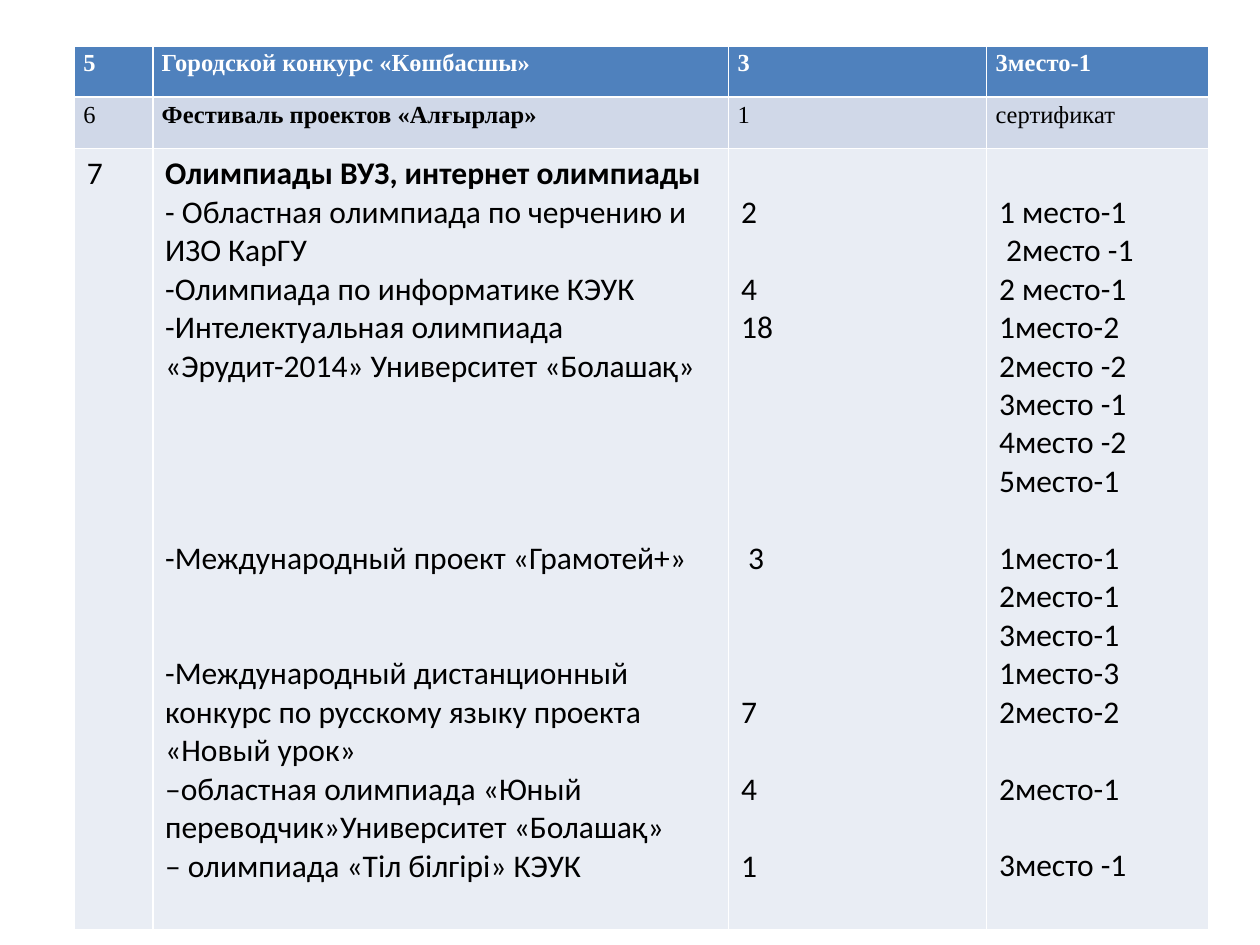
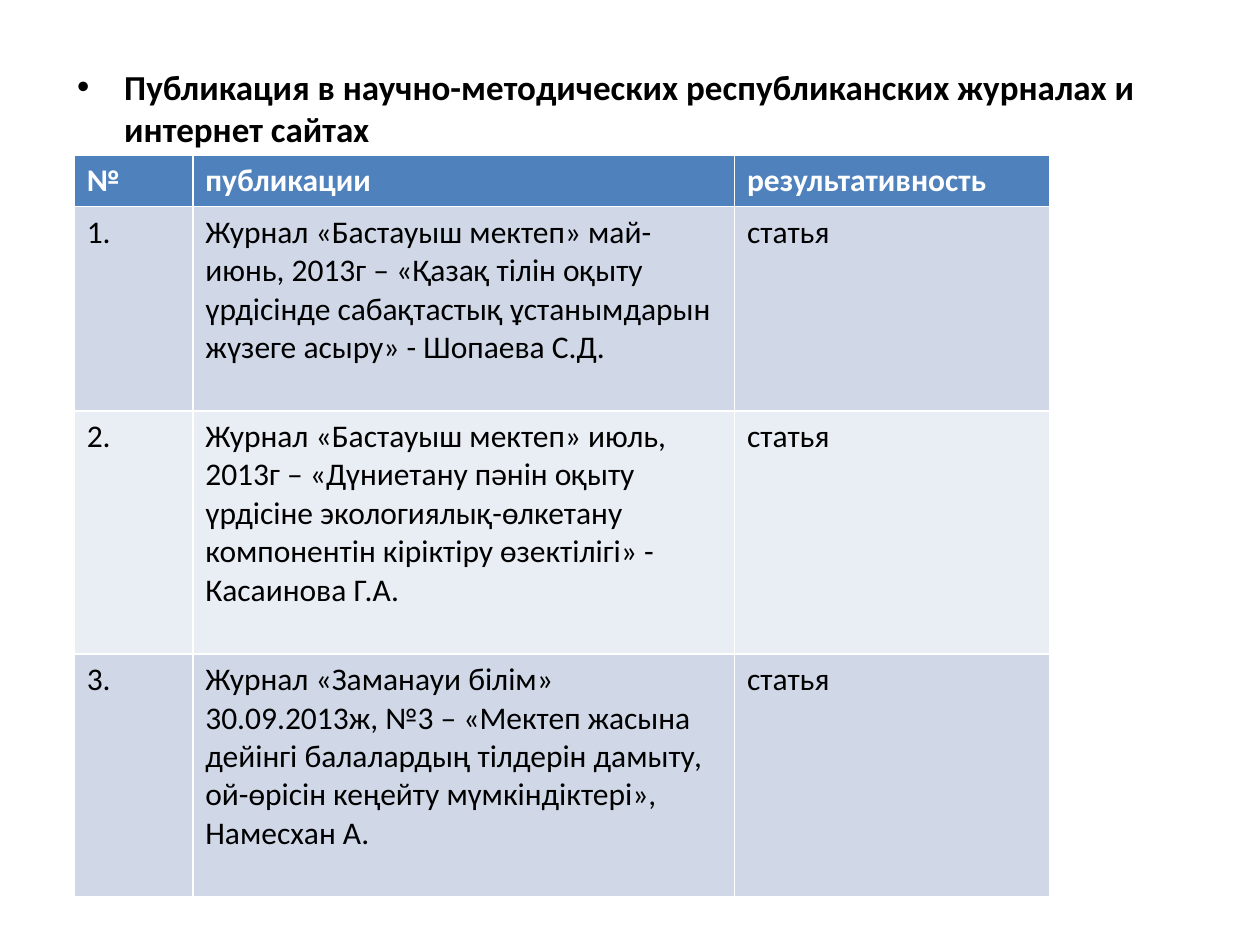
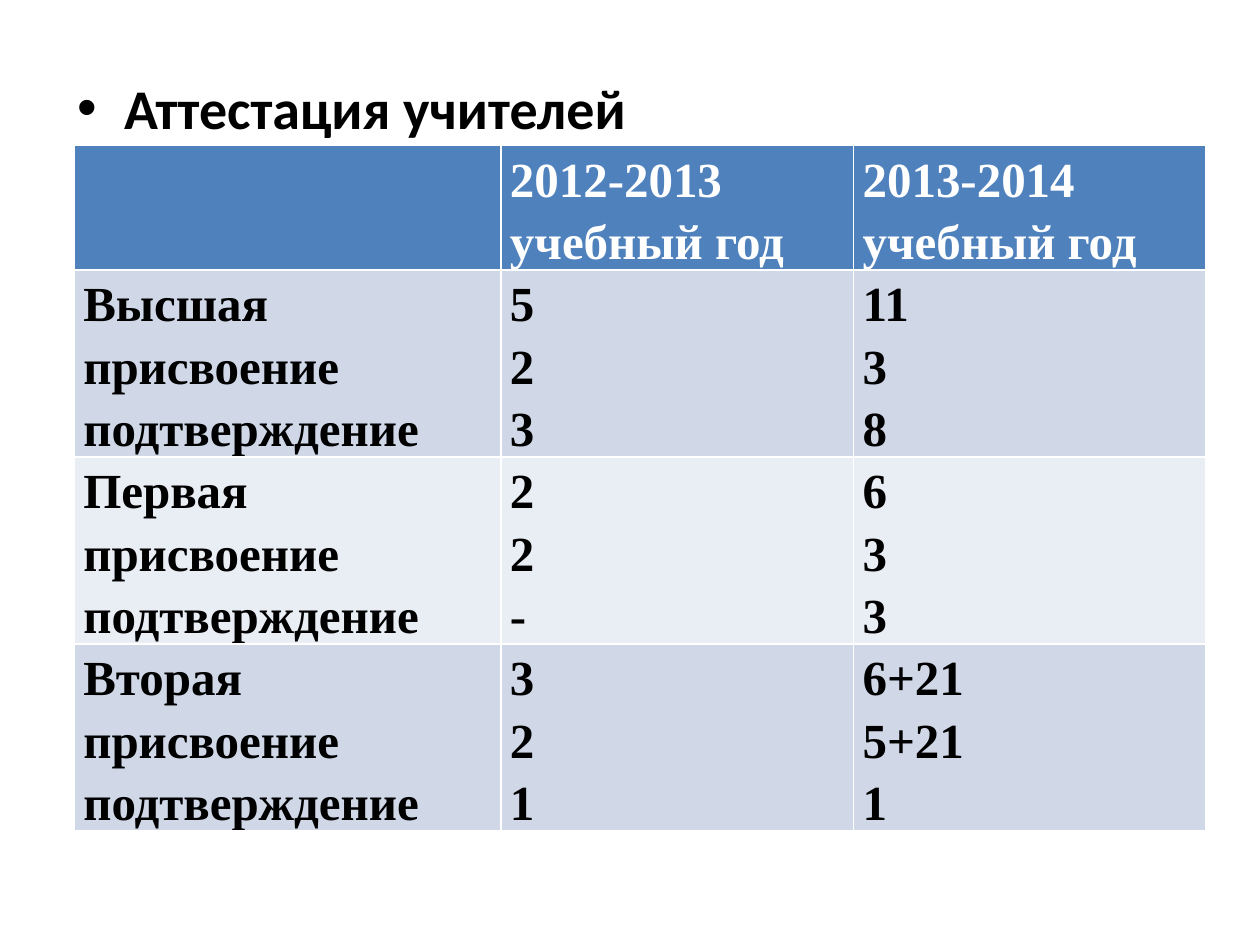
from lxml import etree
from pptx import Presentation
from pptx import util as u
from pptx.dml.color import RGBColor
from pptx.enum import text
from pptx.oxml.ns import qn

THEME = {
    "black": RGBColor(0x00, 0x00, 0x00),
    "white": RGBColor(0xFF, 0xFF, 0xFF),
    "header": RGBColor(0x4F, 0x81, 0xBD),
    "bands": [RGBColor(0xE9, 0xED, 0xF4), RGBColor(0xD0, 0xD8, 0xE8)],
    "heading font": "Calibri",
    "left": u.Cm(1.5),
    "blank line": u.Pt(22),
    "rows": {
        "body": {"font": {"name": "Calibri", "size": u.Pt(18), "bold": False},
                 "spacing": 1.0, "inset x": u.Cm(0.25), "inset y": u.Cm(0.13)},
        "compact": {"font": {"name": "Times New Roman", "size": u.Pt(14), "bold": False},
                    "spacing": 1.15, "inset x": u.Cm(0.18), "inset y": 0},
        "large": {"font": {"name": "Times New Roman", "size": u.Pt(28), "bold": True},
                  "spacing": 1.15, "inset x": u.Cm(0.18), "inset y": 0},
    },
}

# In a cell, a number stands for that many blank lines before the next paragraph.
CONTESTS = [
    [["5"], ["Городской конкурс «Көшбасшы»"], ["3"], ["3место-1"]],
    [["6"], ["Фестиваль проектов «Алғырлар»"], ["1"], ["сертификат"]],
    [
        ["7"],
        ["Олимпиады ВУЗ, интернет олимпиады",
         "- Областная олимпиада по черчению и ИЗО КарГУ",
         "-Олимпиада по информатике КЭУК",
         "-Интелектуальная олимпиада «Эрудит-2014» Университет «Болашақ»", 4,
         "-Международный проект «Грамотей+»", 2,
         "-Международный дистанционный конкурс по русскому языку проекта «Новый урок»",
         "–областная олимпиада «Юный переводчик»Университет «Болашақ»",
         "– олимпиада «Тіл білгірі» КЭУК"],
        [1, "2", 1, "4", "18", 5, " 3", 3, "7", 1, "4", 1, "1"],
        [1, "1 место-1", " 2место -1", "2 место-1", "1место-2", "2место -2",
         "3место -1", "4место -2", "5место-1", 1, "1место-1", "2место-1",
         "3место-1", "1место-3", "2место-2", 1, "2место-1", 1, "3место -1"],
    ],
]

PUBLICATIONS = [
    [["№"], ["публикации"], ["результативность"]],
    [["1."],
     ["Журнал «Бастауыш мектеп» май-июнь, 2013г – «Қазақ тілін оқыту үрдісінде "
      "сабақтастық ұстанымдарын жүзеге асыру» - Шопаева С.Д."],
     ["статья"]],
    [["2."],
     ["Журнал «Бастауыш мектеп» июль, 2013г – «Дүниетану пәнін оқыту үрдісіне "
      "экологиялық-өлкетану компонентін кіріктіру өзектілігі» - Касаинова Г.А."],
     ["статья"]],
    [["3."],
     ["Журнал «Заманауи білім» 30.09.2013ж, №3 – «Мектеп жасына дейінгі балалардың "
      "тілдерін дамыту, ой-өрісін кеңейту мүмкіндіктері», Намесхан А."],
     ["статья"]],
]

ATTESTATION = [[[], ["2012-2013 учебный год"], ["2013-2014 учебный год"]]]
for category, previous_year, current_year in [
    ("Высшая", ["5", "2", "3"], ["11", "3", "8"]),
    ("Первая", ["2", "2", "-"], ["6", "3", "3"]),
    ("Вторая", ["3", "2", "1"], ["6+21", "5+21", "1"]),
]:
    ATTESTATION.append([[category, "присвоение", "подтверждение"], previous_year, current_year])

SLIDES = [
    {"heading": None, "table": CONTESTS, "top": 0.93,
     "columns": [1.58, 11.61, 5.2, 4.47], "heights": [1.03, 1.03, 15.75],
     "styles": ["compact", "compact", "body"],
     "bold": {"Фестиваль проектов «Алғырлар»", "Олимпиады ВУЗ, интернет олимпиады"}},
    {"heading": "Публикация в научно-методических республиканских журналах и интернет сайтах",
     "heading top": 1.2, "heading size": 20, "table": PUBLICATIONS, "top": 3.13,
     "columns": [2.39, 10.92, 6.35], "heights": [1.02, 4.12, 4.9, 4.9],
     "styles": ["body"] * 4, "bold": set()},
    {"heading": "Аттестация учителей",
     "heading top": 1.35, "heading size": 32, "table": ATTESTATION, "top": 2.93,
     "columns": [8.6, 7.11, 7.09], "heights": [2.5, 3.76, 3.76, 3.76],
     "styles": ["large"] * 4, "bold": set()},
]


def set_attributes(target, values):
    for name, value in values.items():
        setattr(target, name, value)


def fill_cell(cell, content, style, colour, bold_texts):
    """Write the paragraphs of a cell, turning blank lines into spacing."""
    set_attributes(cell, {"margin_left": style["inset x"], "margin_right": style["inset x"],
                          "margin_top": style["inset y"], "margin_bottom": style["inset y"]})
    blank_lines = 0
    paragraph = None
    for item in content:
        if isinstance(item, int):
            blank_lines = item
            continue
        gap = blank_lines * THEME["blank line"]
        if paragraph is None:
            paragraph = cell.text_frame.paragraphs[0]
            cell.margin_top = style["inset y"] + gap
        else:
            paragraph = cell.text_frame.add_paragraph()
            paragraph.space_before = u.Emu(gap)
        blank_lines = 0
        paragraph.line_spacing = style["spacing"]
        run = paragraph.add_run()
        run.text = item
        set_attributes(run.font, style["font"])
        run.font.color.rgb = colour
        if item in bold_texts:
            run.font.bold = True


presentation = Presentation()
presentation.slide_width = u.Cm(25.4)
presentation.slide_height = u.Cm(19.05)
TITLE_ONLY, BLANK = presentation.slide_layouts[5], presentation.slide_layouts[6]

for content in SLIDES:
    slide = presentation.slides.add_slide(TITLE_ONLY if content["heading"] else BLANK)

    if content["heading"]:
        title = slide.shapes.title
        set_attributes(title, {"left": u.Cm(1.3), "top": u.Cm(content["heading top"]),
                               "width": u.Cm(22.86), "height": u.Cm(1.9)})
        set_attributes(title.text_frame, {"text": content["heading"], "word_wrap": True,
                                          "auto_size": text.MSO_AUTO_SIZE.NONE,
                                          "vertical_anchor": text.MSO_ANCHOR.TOP})
        paragraph = title.text_frame.paragraphs[0]
        paragraph.alignment = text.PP_ALIGN.LEFT
        properties = paragraph._p.get_or_add_pPr()
        properties.set("marL", str(u.Cm(0.95)))
        properties.set("indent", str(-u.Cm(0.95)))
        etree.SubElement(properties, qn("a:buFont"), typeface="Arial")
        etree.SubElement(properties, qn("a:buChar"), char="•")
        font = paragraph.runs[0].font
        set_attributes(font, {"name": THEME["heading font"], "bold": True,
                              "size": u.Pt(content["heading size"])})
        font.color.rgb = THEME["black"]

    table = slide.shapes.add_table(
        len(content["heights"]), len(content["columns"]), THEME["left"], u.Cm(content["top"]),
        u.Cm(sum(content["columns"])), u.Cm(sum(content["heights"]))).table
    for column, width in zip(table.columns, content["columns"]):
        column.width = u.Cm(width)
    for row_index, row in enumerate(table.rows):
        row.height = u.Cm(content["heights"][row_index])
        is_header = row_index == 0
        style = THEME["rows"][content["styles"][row_index]]
        if is_header:
            style = {**style, "font": {**style["font"], "bold": True}}
        for cell, cell_content in zip(row.cells, content["table"][row_index]):
            cell.fill.solid()
            cell.fill.fore_color.rgb = THEME["header"] if is_header else THEME["bands"][row_index % 2]
            fill_cell(cell, cell_content, style,
                      THEME["white"] if is_header else THEME["black"], content["bold"])

presentation.save("out.pptx")
